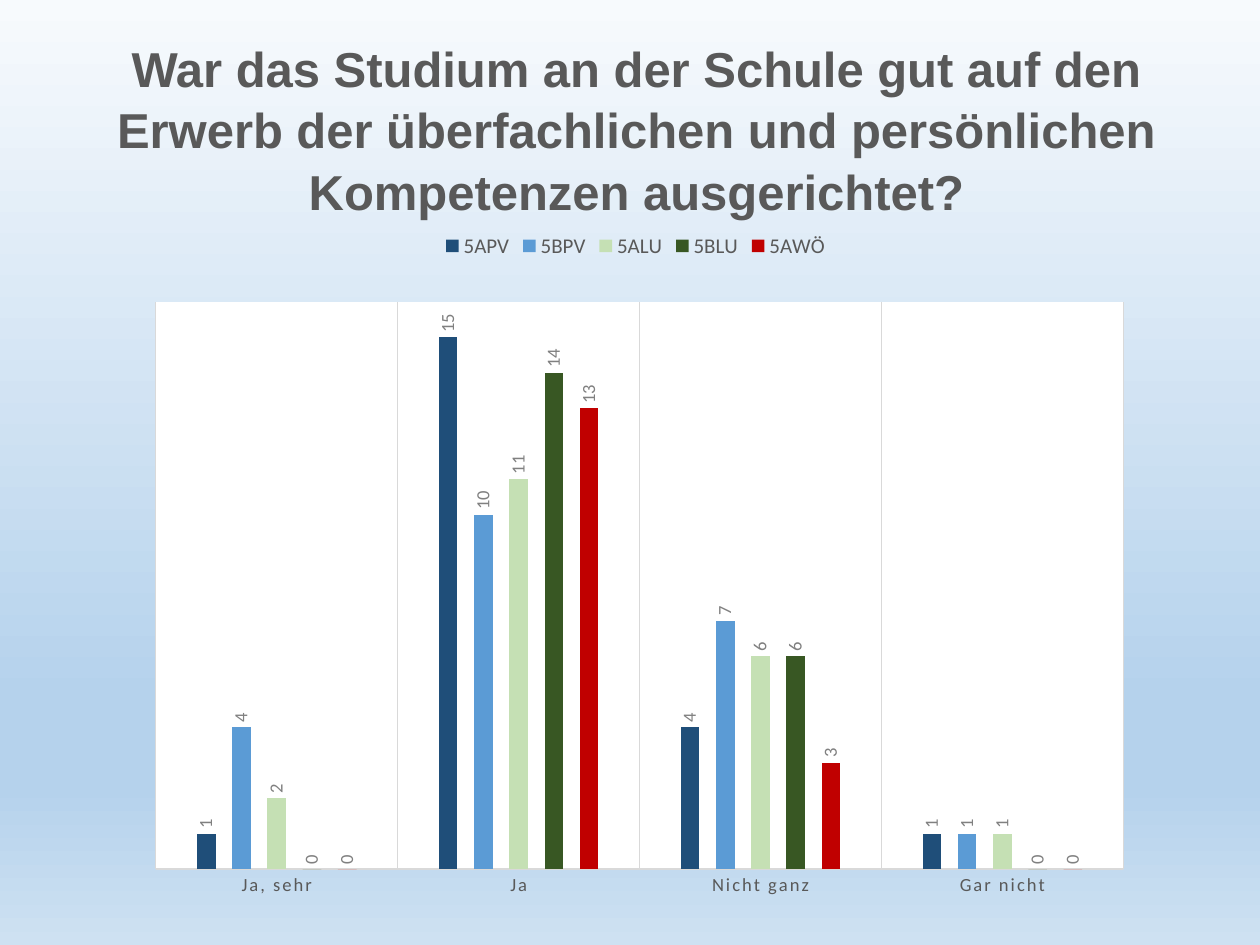
from lxml.etree import SubElement
from pptx import Presentation
from pptx.chart.data import CategoryChartData
from pptx.dml.color import RGBColor
from pptx.enum.chart import (XL_CHART_TYPE, XL_LABEL_POSITION,
                             XL_LEGEND_POSITION, XL_TICK_MARK)
from pptx.enum.text import PP_ALIGN
from pptx.oxml import parse_xml
from pptx.oxml.ns import nsdecls, qn
from pptx.util import Pt

TITLE = ("War das Studium an der Schule gut auf den Erwerb der "
         "überfachlichen und persönlichen Kompetenzen ausgerichtet?")
ANSWERS = ["Ja, sehr", "Ja", "Nicht ganz", "Gar nicht"]
CLASSES = [
    ("5APV", "1F4E79", [1, 15, 4, 1]),
    ("5BPV", "5B9BD5", [4, 10, 7, 1]),
    ("5ALU", "C5E0B4", [2, 11, 6, 1]),
    ("5BLU", "385723", [0, 14, 6, 0]),
    ("5AWÖ", "C00000", [0, 13, 3, 0]),
]
BACKGROUND_STOPS = [(0, "F7FAFD"), (74, "B5D2EC"), (83, "B5D2EC"), (100, "CEE1F2")]


def color(hex_code):
    return RGBColor.from_string(hex_code)


def format_font(font, size, hex_code, name="Calibri", bold=False):
    font.size = Pt(size)
    font.name = name
    font.bold = bold
    font.color.rgb = color(hex_code)


def add_text(text_frame, text, alignment=PP_ALIGN.LEFT, line_spacing=1.0, **font_format):
    paragraph = text_frame.paragraphs[0]
    paragraph.alignment = alignment
    paragraph.line_spacing = line_spacing
    run = paragraph.add_run()
    run.text = text
    format_font(run.font, **font_format)


class SlideBuilder:
    text_color = "595959"
    label_color = "808080"
    line_color = "D9D9D9"
    small_size = 10.6

    def __init__(self, slide):
        self.slide = slide

    def background(self, stops):
        fill = self.slide.background.fill
        fill.gradient()
        fill.gradient_angle = 270
        stop_list = self.slide.element.find(".//" + qn("a:gsLst"))
        for stop in list(stop_list):
            stop_list.remove(stop)
        for percent, hex_code in stops:
            stop = SubElement(stop_list, qn("a:gs"), pos=str(percent * 1000))
            SubElement(stop, qn("a:srgbClr"), val=hex_code)

    def title(self, text, left, top, width, height):
        box = self.slide.shapes.add_textbox(Pt(left), Pt(top), Pt(width), Pt(height))
        box.text_frame.word_wrap = True
        add_text(box.text_frame, text, alignment=PP_ALIGN.CENTER, line_spacing=1.05,
                 size=28, hex_code=self.text_color, name="Arial", bold=True)

    def column_chart(self, categories, series_rows, left, top, width, height):
        data = CategoryChartData(number_format="0")
        data.categories = categories
        for name, _, values in series_rows:
            data.add_series(name, values)
        chart = self.slide.shapes.add_chart(
            XL_CHART_TYPE.COLUMN_CLUSTERED, Pt(left), Pt(top), Pt(width), Pt(height), data).chart
        format_font(chart.font, 10, "000000")
        chart.has_title = False
        self.legend(chart)
        self.axes(chart)

        plot = chart.plots[0]
        plot.gap_width = 444
        plot.overlap = -90
        plot.vary_by_categories = False
        for series, (_, hex_code, _) in zip(plot.series, series_rows):
            series.format.fill.solid()
            series.format.fill.fore_color.rgb = color(hex_code)
            self.value_labels(series)
        self.plot_area(chart, x=0.027, y=0.117, w=0.954, h=0.801)

    def legend(self, chart):
        chart.has_legend = True
        chart.legend.position = XL_LEGEND_POSITION.TOP
        chart.legend.include_in_layout = False
        format_font(chart.legend.font, 12, self.text_color)

    def axes(self, chart):
        axis = chart.category_axis
        axis.major_tick_mark = XL_TICK_MARK.NONE
        axis.has_major_gridlines = True
        for line in (axis.format.line, axis.major_gridlines.format.line):
            line.width = Pt(0.75)
            line.color.rgb = color(self.line_color)
        font = axis.tick_labels.font
        format_font(font, self.small_size, self.text_color)
        axis._element.find(".//" + qn("a:defRPr")).set("spc", "120")

        value_axis = chart.value_axis
        value_axis.minimum_scale = 0
        value_axis.maximum_scale = 16
        value_axis.has_major_gridlines = False
        value_axis.visible = False

    def value_labels(self, series):
        labels = series.data_labels
        labels.show_value = True
        labels.position = XL_LABEL_POSITION.OUTSIDE_END
        format_font(labels.font, self.small_size, self.label_color)
        body = labels._element.find(".//" + qn("a:bodyPr"))
        body.set("rot", "-5400000")
        body.set("vert", "horz")

    def plot_area(self, chart, **layout):
        """Place the inner plot area by fractions of the chart and fill it white."""
        area = chart._chartSpace.find(".//" + qn("c:plotArea"))
        for old_layout in area.findall(qn("c:layout")):
            area.remove(old_layout)
        settings = {"layoutTarget": "inner", "xMode": "edge", "yMode": "edge", **layout}
        entries = "".join(f'<c:{key} val="{value}"/>' for key, value in settings.items())
        area.insert(0, parse_xml(
            f'<c:layout {nsdecls("c")}><c:manualLayout>{entries}</c:manualLayout></c:layout>'))
        area.append(parse_xml(
            f'<c:spPr {nsdecls("c", "a")}><a:solidFill><a:srgbClr val="FFFFFF"/>'
            '</a:solidFill><a:ln><a:noFill/></a:ln></c:spPr>'))


def main():
    presentation = Presentation()
    presentation.slide_width = Pt(720)
    presentation.slide_height = Pt(540)
    builder = SlideBuilder(presentation.slides.add_slide(presentation.slide_layouts[6]))
    builder.background(BACKGROUND_STOPS)
    builder.column_chart(ANSWERS, CLASSES, left=73.4, top=125.3, width=579.6, height=404.6)
    builder.title(TITLE, left=23.8, top=16.6, width=679.7, height=108.7)
    presentation.save("out.pptx")


if __name__ == "__main__":
    main()
